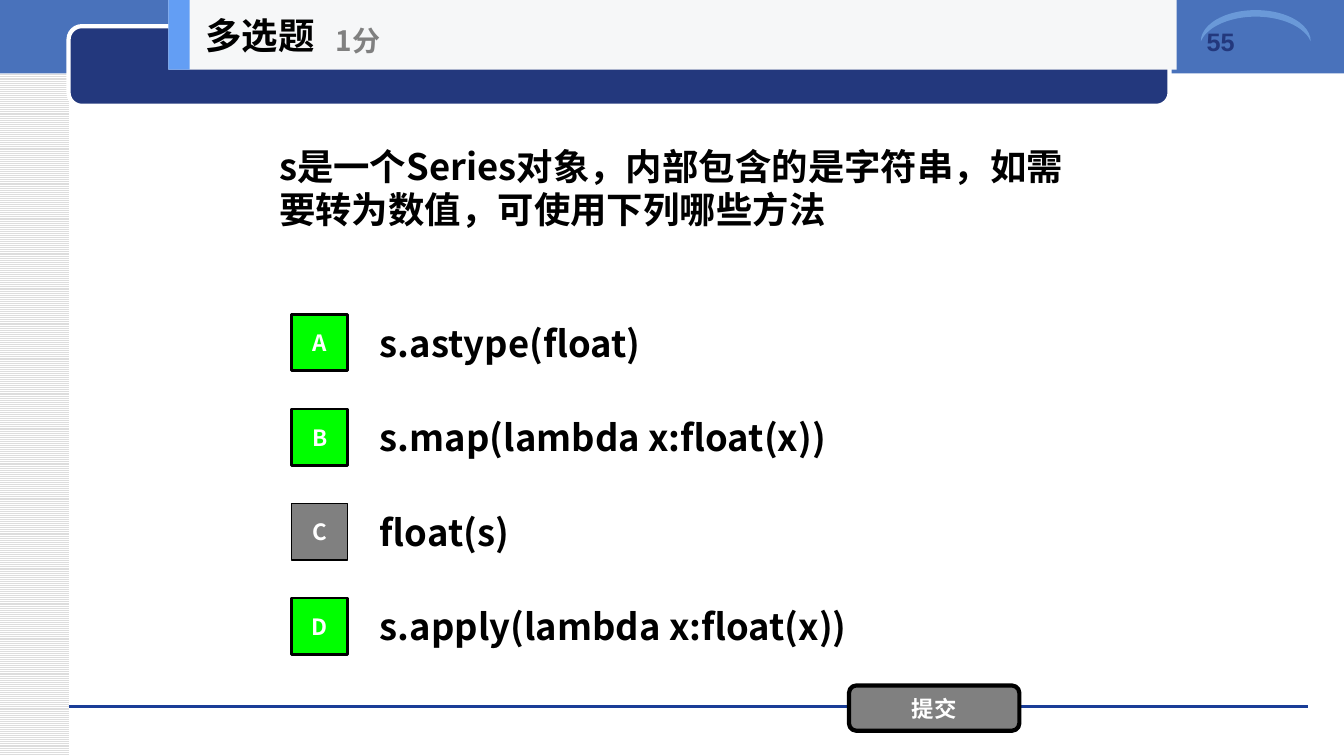
"""Build a multiple-choice quiz slide about converting a Series to numbers."""
from dataclasses import dataclass

from lxml import etree
from pptx import Presentation
from pptx.dml.color import RGBColor
from pptx.enum.dml import MSO_PATTERN
from pptx.enum.shapes import MSO_CONNECTOR, MSO_SHAPE
from pptx.enum.text import MSO_ANCHOR, PP_ALIGN
from pptx.oxml.ns import qn
from pptx.util import Inches, Pt

RECTANGLE = MSO_SHAPE.RECTANGLE
ROUNDED = MSO_SHAPE.ROUNDED_RECTANGLE
MOON = MSO_SHAPE.MOON
STRAIGHT = MSO_CONNECTOR.STRAIGHT
STRIPES = MSO_PATTERN.LIGHT_HORIZONTAL
TOP, MIDDLE = MSO_ANCHOR.TOP, MSO_ANCHOR.MIDDLE
LEFT, CENTER = PP_ALIGN.LEFT, PP_ALIGN.CENTER

COLUMNS, ROWS = 13.33, 7.5
OPTION_STEP = ROWS / 8
OPTION_CENTER = 3.4
BADGE_SIDE = 0.56
LABEL_HEIGHT = 0.7
OPTIONS = (
    ("A", "s.astype(float)", True),
    ("B", "s.map(lambda x:float(x))", True),
    ("C", "float(s)", False),
    ("D", "s.apply(lambda x:float(x))", True),
)


@dataclass(frozen=True)
class Theme:
    """Colours, fonts and type sizes of the slide."""

    black: str = "000000"
    white: str = "FFFFFF"
    grey: str = "808080"
    stripe: str = "DDDDDD"
    band: str = "4972BB"
    navy: str = "23387D"
    rule: str = "1A3D97"
    arc: str = "6A99D8"
    correct: str = "00FF00"
    header: str = "F6F7F8"
    accent: str = "639EF4"
    quiz_font: str = "Noto Sans CJK SC"
    number_font: str = "Arial"
    heading: int = 26
    score: int = 20
    number: int = 18
    badge: int = 16


THEME = Theme()


def grid(*cells):
    """Convert grid columns and rows to slide lengths."""
    return [Inches(cell) for cell in cells]


def color(code):
    """Return the colour for a hexadecimal code."""
    return RGBColor.from_string(code)


def write(shape, text, size, ink, align=LEFT, anchor=MIDDLE, font=THEME.quiz_font, wrap=True):
    """Write one bold paragraph into a shape."""
    frame = shape.text_frame
    frame.text = text
    frame.word_wrap = wrap
    frame.vertical_anchor = anchor
    para = frame.paragraphs[0]
    para.alignment = align
    span = para.runs[0]
    span.font.size = Pt(size)
    span.font.bold = True
    span.font.name = font
    span.font.color.rgb = color(ink)
    east_asian = etree.SubElement(span.font._element, qn("a:ea"))
    east_asian.set("typeface", font)


def add_box(page, kind, place, fill, line=None, width=0):
    """Add a flat filled shape with an optional outline."""
    box = page.shapes.add_shape(kind, *grid(*place))
    box.shadow.inherit = False
    box.fill.solid()
    box.fill.fore_color.rgb = color(fill)
    if line:
        box.line.color.rgb = color(line)
        box.line.width = Pt(width)
    else:
        box.line.fill.background()
    return box


def add_text(page, place, text, size, ink, **style):
    """Add a text box."""
    write(page.shapes.add_textbox(*grid(*place)), text, size, ink, **style)


def add_rule(page, start, end):
    """Add a hairline between two grid points."""
    rule = page.shapes.add_connector(STRAIGHT, *grid(*start, *end))
    rule.line.color.rgb = color(THEME.rule)
    rule.line.width = Pt(0)
    etree.SubElement(rule._element.spPr, qn("a:effectLst"))


def add_backdrop(page):
    """Draw the striped margin, bands, rule and page number."""
    margin = add_box(page, RECTANGLE, (0, 0, 0.68, ROWS), THEME.white)
    margin.fill.patterned()
    margin.fill.pattern = STRIPES
    margin.fill.fore_color.rgb = color(THEME.stripe)
    margin.fill.back_color.rgb = color(THEME.white)
    add_box(page, RECTANGLE, (0, -0.03, COLUMNS, 0.76), THEME.band)
    add_rule(page, (0.68, 7.01), (12.97, 7.01))
    add_box(page, ROUNDED, (0.68, 0.26, 10.92, 0.79), THEME.navy, THEME.white, 3)
    arc = add_box(page, MOON, (12.3, -0.29, 0.31, 1.09), THEME.arc)
    arc.adjustments[0] = 0.21
    arc.rotation = 90
    add_text(page, (11.87, 0.21, 1.21, 0.71), "55", THEME.number, THEME.navy,
             anchor=TOP, font=THEME.number_font)


def add_option(page, index, letter, answer, correct):
    """Add a lettered badge and its answer on one option row."""
    center = OPTION_CENTER + index * OPTION_STEP
    add_text(page, (3.67, center - LABEL_HEIGHT / 2, 7, LABEL_HEIGHT), answer,
             THEME.heading, THEME.black)
    fill, width = (THEME.correct, 2) if correct else (THEME.grey, 1)
    place = (2.89, center - BADGE_SIDE / 2, BADGE_SIDE, BADGE_SIDE)
    badge = add_box(page, RECTANGLE, place, fill, THEME.black, width)
    write(badge, letter, THEME.badge, THEME.white, CENTER)


def add_header(page):
    """Draw the question type and score bar."""
    add_box(page, RECTANGLE, (1.67, 0, 10, 0.69), THEME.header)
    add_box(page, RECTANGLE, (1.67, 0, 0.21, 0.69), THEME.accent)
    add_text(page, (1.94, 0, 2.08, 0.69), "多选题", THEME.heading, THEME.black, wrap=False)
    add_text(page, (3.23, 0.12, 2.5, 0.56), "1分", THEME.score, THEME.grey, wrap=False)


def main():
    """Build and save the deck."""
    deck = Presentation()
    deck.slide_width, deck.slide_height = grid(COLUMNS, ROWS)
    page = deck.slides.add_slide(deck.slide_layouts[6])
    add_backdrop(page)
    add_text(page, (2.67, 0.69, 8, 2.34),
             "s是一个Series对象，内部包含的是字符串，如需要转为数值，可使用下列哪些方法",
             THEME.heading, THEME.black)
    for index, option in enumerate(OPTIONS):
        add_option(page, index, *option)
    submit = add_box(page, ROUNDED, (8.42, 6.8, 1.69, 0.45), THEME.grey, THEME.black, 3)
    write(submit, "提交", THEME.badge, THEME.white, CENTER)
    add_header(page)
    deck.save("out.pptx")


if __name__ == "__main__":
    main()
